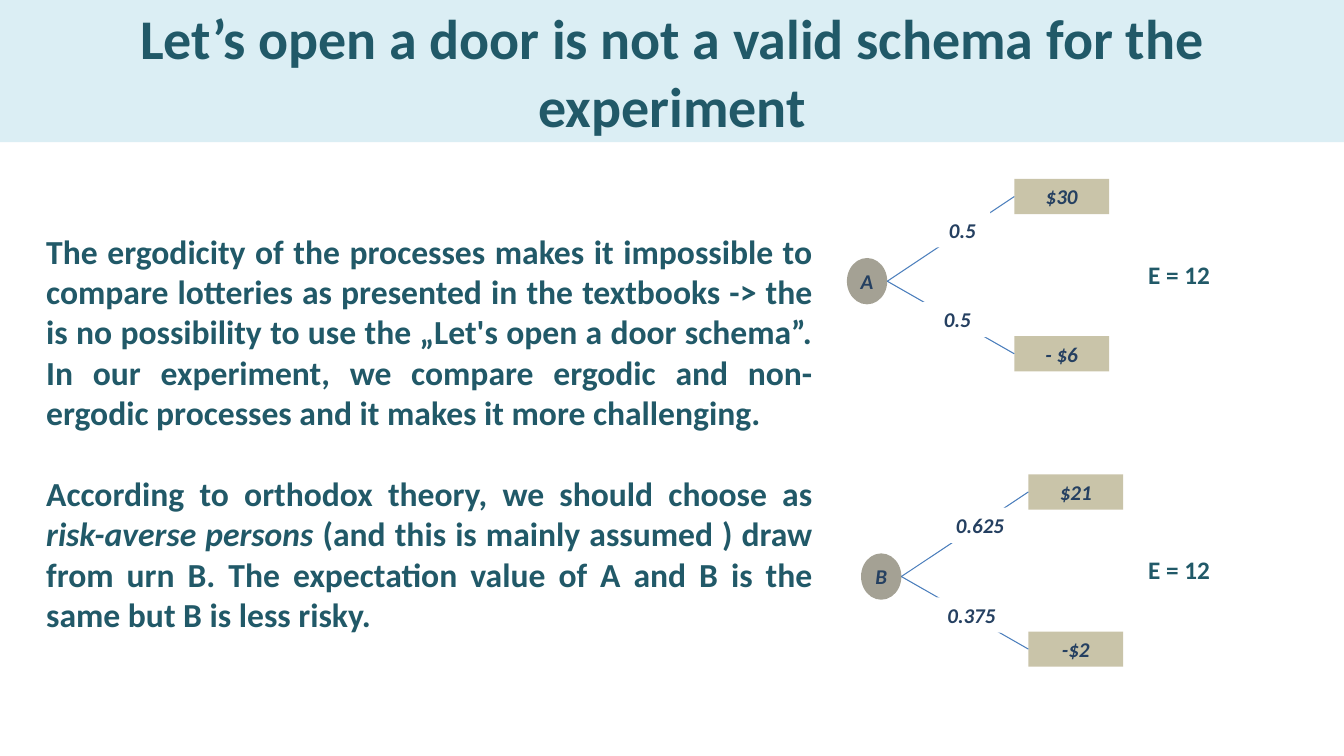
from pptx import Presentation
from pptx.dml.color import RGBColor
from pptx.enum.shapes import MSO_CONNECTOR, MSO_SHAPE
from pptx.enum.text import MSO_ANCHOR, PP_ALIGN
from pptx.oxml.ns import qn
from pptx.util import Inches, Pt
from lxml.etree import SubElement

COLORS = {
    "band": "DBEEF4",
    "teal": "215968",
    "navy": "254061",
    "urn": "4A452A",
    "payoff": "948A54",
    "branch": "4B7EBC",
    "white": "FFFFFF",
}
FONT = "Calibri"
BRANCH_RUN = 1.26
URN_WIDTH, URN_HEIGHT = 0.4, 0.46
PAYOFF_WIDTH, ROW_HEIGHT = 0.94, 0.35


def color(name):
    """Return the named colour."""
    return RGBColor.from_string(COLORS[name])


def write(frame, *paragraphs, size=15, ink="navy", italic=False,
          align=PP_ALIGN.CENTER, anchor=MSO_ANCHOR.TOP, gap=0, wrap=True):
    """Fill a text frame; a paragraph is a list of (text, italic) runs or a string."""
    frame.word_wrap = wrap
    frame.vertical_anchor = anchor
    for index, content in enumerate(paragraphs):
        paragraph = frame.add_paragraph() if index else frame.paragraphs[0]
        paragraph.alignment = align
        if index:
            paragraph.space_before = Pt(gap)
        runs = [(content, italic)] if isinstance(content, str) else content
        for text, slanted in runs:
            run = paragraph.add_run()
            run.text = text
            run.font.name = FONT
            run.font.size = Pt(size)
            run.font.bold = True
            run.font.italic = slanted
            run.font.color.rgb = color(ink)


def add_title(slide, text):
    """Turn the title placeholder into a full-width band."""
    title = slide.shapes.title
    title.left, title.top = Inches(0), Inches(0)
    title.width, title.height = Inches(13.33), Inches(1.41)
    title.fill.solid()
    title.fill.fore_color.rgb = color("band")
    write(title.text_frame, text, size=40, ink="teal", anchor=MSO_ANCHOR.MIDDLE)


def add_text(slide, left, top, width, height, *paragraphs, **style):
    """Add a justified text box."""
    box = slide.shapes.add_textbox(
        Inches(left), Inches(top), Inches(width), Inches(height))
    write(box.text_frame, *paragraphs, ink="teal", align=PP_ALIGN.JUSTIFY, **style)


def add_node(shapes, kind, left, top, width, height, text, fill, alpha=100):
    """Add a filled shape with a bold italic label."""
    node = shapes.add_shape(
        kind, Inches(left), Inches(top), Inches(width), Inches(height))
    node.shadow.inherit = False
    node.line.fill.background()
    node.fill.solid()
    node.fill.fore_color.rgb = color(fill)
    if alpha < 100:
        tint = node.element.spPr.find(".//" + qn("a:srgbClr"))
        SubElement(tint, qn("a:alpha")).set("val", str(alpha * 1000))
    write(node.text_frame, text, italic=True, anchor=MSO_ANCHOR.MIDDLE, wrap=False)
    return node


def add_branch(shapes, x, y, payoff):
    """Draw a line from an urn's right edge to the left side of its payoff."""
    branch = shapes.add_connector(
        MSO_CONNECTOR.STRAIGHT, Inches(x), Inches(y), payoff.left, payoff.top)
    branch.end_connect(payoff, 1)
    branch.line.color.rgb = color("branch")
    branch.line.width = Pt(0.75)
    SubElement(branch.element.spPr, qn("a:effectLst"))


def add_lottery(slide, name, left, middle, outcomes):
    """Draw an urn with its branches, probabilities and payoffs as one group."""
    shapes = slide.shapes.add_group_shape().shapes
    fork = left + URN_WIDTH
    for rise, payoff, chance, chance_left, chance_rise, chance_width in outcomes:
        prize = add_node(
            shapes, MSO_SHAPE.RECTANGLE, fork + BRANCH_RUN,
            middle + rise - ROW_HEIGHT / 2, PAYOFF_WIDTH, ROW_HEIGHT,
            payoff, "payoff", alpha=50)
        add_branch(shapes, fork, middle, prize)
        add_node(
            shapes, MSO_SHAPE.RECTANGLE, fork + chance_left,
            middle + chance_rise - ROW_HEIGHT / 2, chance_width, ROW_HEIGHT,
            chance, "white")
    add_node(
        shapes, MSO_SHAPE.OVAL, left, middle - URN_HEIGHT / 2,
        URN_WIDTH, URN_HEIGHT, name, "urn", alpha=50)
    add_text(slide, 11.29, middle - 0.27, 1.26, 0.4, "E = 12", size=18)


def main():
    """Build the slide and save it."""
    deck = Presentation()
    deck.slide_width, deck.slide_height = Inches(13.33), Inches(7.5)
    slide = deck.slides.add_slide(deck.slide_layouts[5])
    add_title(slide, "Let’s open a door is not a valid schema for the experiment")
    add_text(
        slide, 0.36, 2.24, 7.8, 4.14,
        "The ergodicity of the processes makes it impossible to compare lotteries "
        "as presented in the textbooks -> the is no possibility to use the "
        "„Let's open a door schema”. In our experiment, we compare ergodic and "
        "non-ergodic processes and it makes it more challenging.",
        [("According to orthodox theory, we should choose as ", False),
         ("risk-averse persons ", True),
         ("(and this is mainly assumed ) draw from urn B. The expectation value "
          "of A and B is the same but B is less risky.", False)],
        size=24, gap=29)
    add_lottery(slide, "A", 8.4, 2.79, [
        (-0.84, "$30", "0.5", 0.47, -0.51, 0.55),
        (0.72, "- $6", "0.5", 0.35, 0.38, 0.69),
    ])
    add_lottery(slide, "B", 8.54, 5.72, [
        (-0.84, "$21", "0.625", 0.39, -0.51, 0.78),
        (0.72, "-$2", "0.375", 0.35, 0.38, 0.69),
    ])
    deck.save("out.pptx")


if __name__ == "__main__":
    main()
